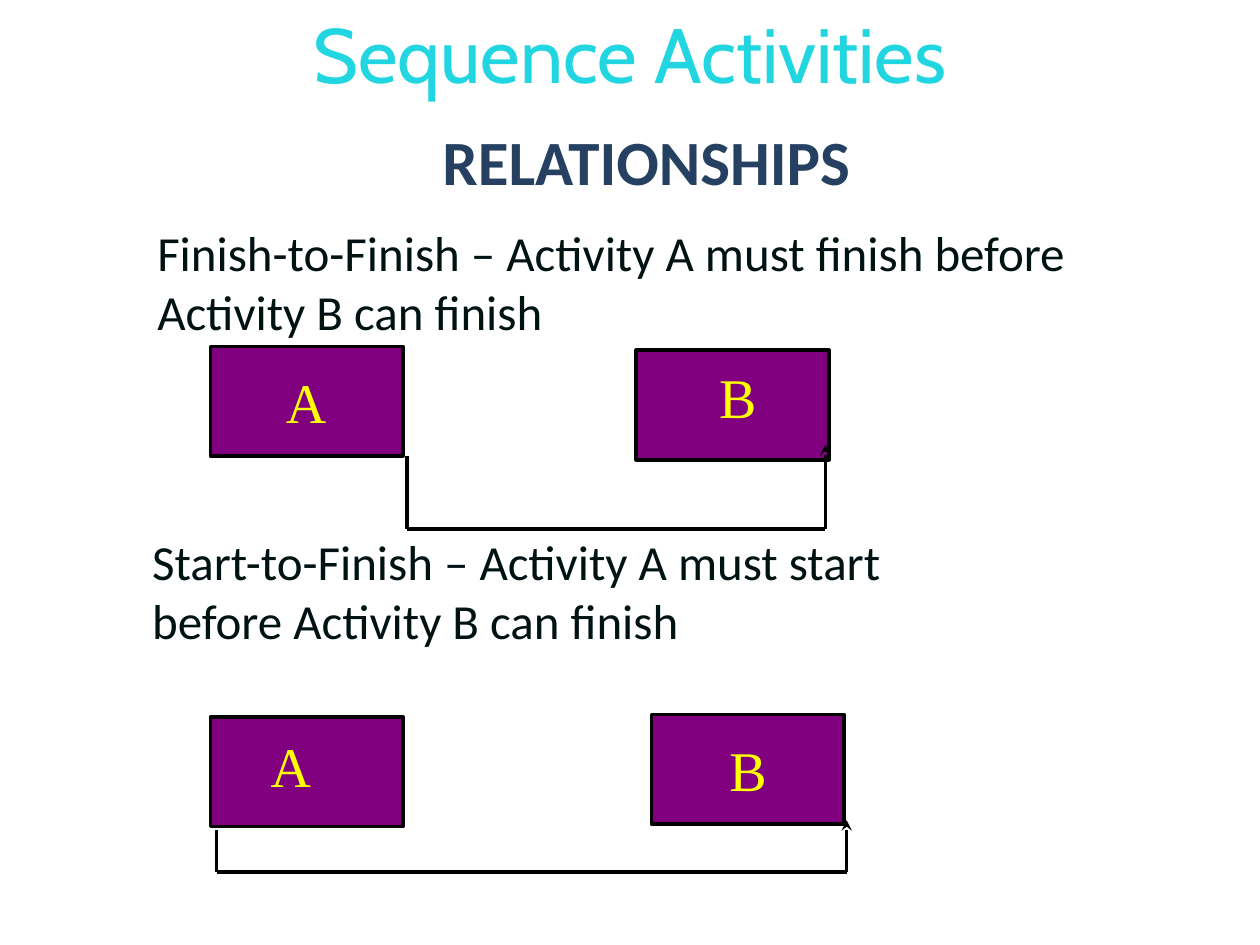
from pptx import Presentation
from pptx.dml.color import RGBColor
from pptx.enum.shapes import MSO_CONNECTOR as Connector, MSO_SHAPE as Shape
from pptx.enum.text import PP_ALIGN as Align
from pptx.oxml.ns import qn
from pptx.util import Pt
from lxml.etree import SubElement

PX = 9144
NODE_SIZE = (153, 87)
COLORS = {
    "title": "21D6E0",
    "heading": "254061",
    "body": "011213",
    "node": "800080",
    "label": "FFFF00",
    "line": "000000",
}


def color(name):
    return RGBColor.from_string(COLORS[name])


def emu(*lengths):
    return [length * PX for length in lengths]


def add_text(shapes, box, text, *, size, font, fill, bold=False, align=Align.LEFT, wrap=True):
    frame = shapes.add_textbox(*emu(*box)).text_frame
    frame.word_wrap = wrap
    para = frame.paragraphs[0]
    para.alignment = align
    span = para.add_run()
    span.text = text
    span.font.size = Pt(size)
    span.font.name = font
    span.font.bold = bold
    span.font.color.rgb = color(fill)


def add_node(shapes, left, top):
    node = shapes.add_shape(Shape.RECTANGLE, *emu(left, top, *NODE_SIZE))
    node.shadow.inherit = False
    node.fill.solid()
    node.fill.fore_color.rgb = color("node")
    node.line.color.rgb = color("line")
    node.line.width = Pt(2)


def add_line(shapes, start, end, arrow=False):
    line = shapes.add_connector(Connector.STRAIGHT, *emu(*start, *end))
    line.line.color.rgb = color("line")
    line.line.width = Pt(2)
    if arrow:
        SubElement(line.line._get_or_add_ln(), qn("a:headEnd"), type="stealth")
    SubElement(line._element.spPr, qn("a:effectLst"))


def add_header(page, box):
    left, top, width, height = box
    add_text(page.shapes, (left, top, width, 84), "Sequence Activities",
             size=44, font="Cabin", fill="title", align=Align.CENTER)
    add_text(page.shapes, (left + 68, top + 92, 640, height - 92), "RELATIONSHIPS",
             size=36, font="Calibri", fill="heading", bold=True, align=Align.CENTER)


def add_relationship(page, box, text, nodes, labels, route):
    left, top, width, height = box
    shapes = page.shapes.add_group_shape().shapes
    add_text(shapes, box, text, size=28, font="Calibri", fill="body")
    for x, y in nodes:
        add_node(shapes, left + x, top + y)
    for letter, (x, y) in zip("AB", labels):
        add_text(shapes, (left + x, top + y, 52, 63), letter,
                 size=32, font="Times New Roman", fill="label", wrap=False)
    start_x, start_y, base_y, end_x, end_y = route
    start = (left + start_x, top + start_y)
    start_corner = (left + start_x, top + base_y)
    end_corner = (left + end_x, top + base_y)
    end = (left + end_x, top + end_y)
    add_line(shapes, start, start_corner)
    add_line(shapes, start_corner, end_corner)
    add_line(shapes, end, end_corner, arrow=True)


def main():
    deck = Presentation()
    deck.slide_width, deck.slide_height = emu(1000, 750)
    page = deck.slides.add_slide(deck.slide_layouts[6])
    add_relationship(
        page, (115, 172, 743, 103),
        "Finish-to-Finish – Activity A must finish before Activity B can finish",
        nodes=[(52, 103), (390, 106)],
        labels=[(102, 115), (446, 111)],
        route=(208, 190, 248, 540, 181),
    )
    add_relationship(
        page, (111, 417, 706, 103),
        "Start-to-Finish – Activity A must start before Activity B can finish",
        nodes=[(56, 152), (406, 150)],
        labels=[(94, 159), (458, 162)],
        route=(61, 242, 275, 561, 234),
    )
    add_header(page, (125, 0, 750, 163))
    deck.save("out.pptx")


if __name__ == "__main__":
    main()
